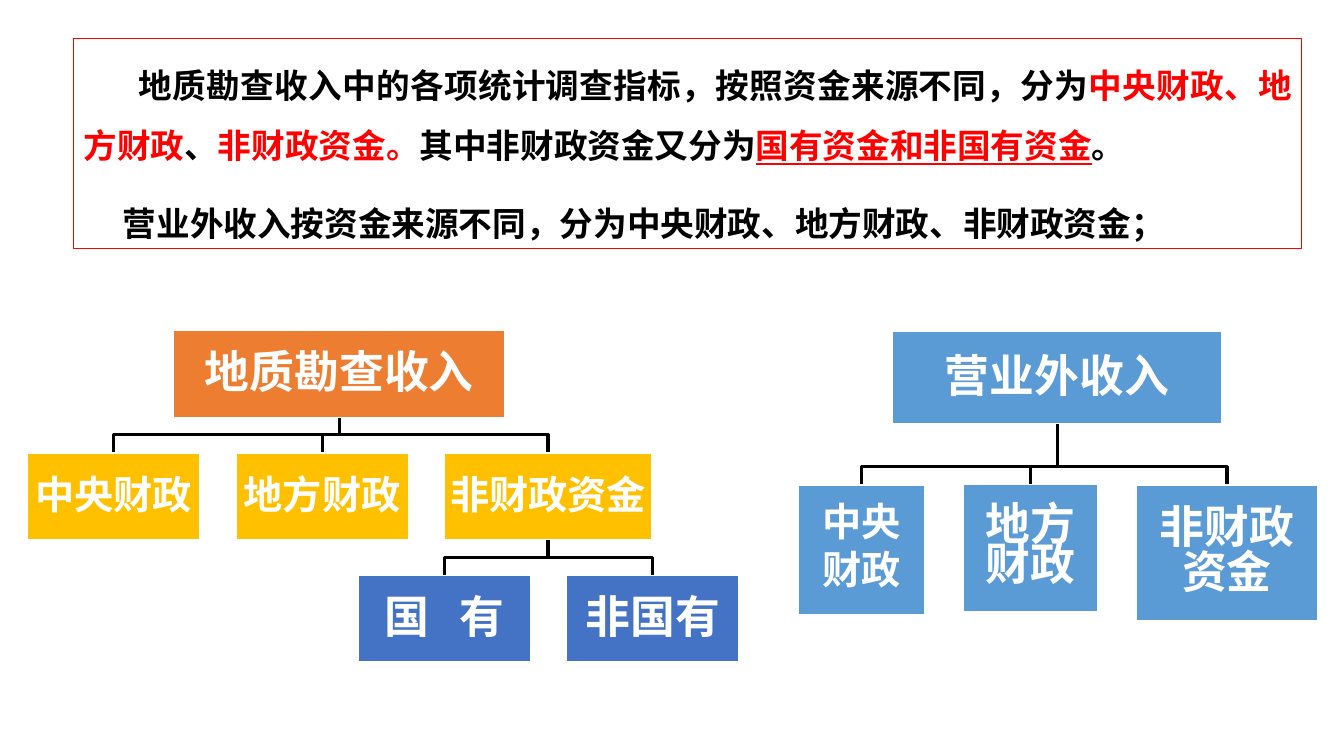
from lxml.etree import SubElement
from pptx import Presentation
from pptx.dml.color import RGBColor
from pptx.enum.shapes import MSO_SHAPE
from pptx.enum.text import MSO_ANCHOR, PP_ALIGN
from pptx.oxml.ns import qn
from pptx.util import Inches, Pt

BLACK = RGBColor(0x00, 0x00, 0x00)
WHITE = RGBColor(0xFF, 0xFF, 0xFF)
RED = RGBColor(0xFF, 0x00, 0x00)
ORANGE = RGBColor(0xED, 0x7D, 0x31)
GOLD = RGBColor(0xFF, 0xC0, 0x00)
NAVY = RGBColor(0x44, 0x72, 0xC4)
BLUE = RGBColor(0x5B, 0x9B, 0xD5)
CJK_FONT = "Noto Sans CJK SC"
BAR_GAP = 0.18  # height of a branch bar above the boxes it leads to


def write(paragraph, text, size=32, color=WHITE, font=CJK_FONT,
          underline=False, tracking=0):
    """Add one bold run to a paragraph; tracking is in points."""
    run = paragraph.add_run()
    run.text = text
    run.font.size = Pt(size)
    run.font.bold = True
    run.font.underline = underline
    run.font.color.rgb = color
    run.font.name = font
    properties = run.font._element
    SubElement(properties, qn("a:ea")).set("typeface", CJK_FONT)
    if tracking:
        properties.set("spc", str(tracking * 100))


def add_box(slide, box, fill, outline, outline_width, margins):
    left, top, width, height = map(Inches, box)
    rectangle = slide.shapes.add_shape(MSO_SHAPE.RECTANGLE, left, top, width, height)
    rectangle.shadow.inherit = False
    rectangle.fill.solid()
    rectangle.fill.fore_color.rgb = fill
    rectangle.line.color.rgb = outline
    rectangle.line.width = Pt(outline_width)
    frame = rectangle.text_frame
    frame.word_wrap = True
    frame.vertical_anchor = MSO_ANCHOR.MIDDLE
    frame.margin_left = frame.margin_right = Inches(margins[0])
    frame.margin_top = frame.margin_bottom = Inches(margins[1])
    return frame


def add_paragraphs(frame, count, align):
    for _ in range(count - 1):
        frame.add_paragraph()
    for paragraph in frame.paragraphs:
        paragraph.alignment = align
    return frame.paragraphs


def add_node(slide, box, lines, fill, size=32, spacing=0.9, after=0):
    """Draw one tree box; each line is a list of (text, tracking) runs."""
    frame = add_box(slide, box, fill, WHITE, 1, (0.02, 0.02))
    for paragraph, runs in zip(add_paragraphs(frame, len(lines), PP_ALIGN.CENTER), lines):
        paragraph.line_spacing = spacing
        paragraph.space_after = Pt(after)
        for text, tracking in runs:
            write(paragraph, text, size=size, tracking=tracking)


def add_branches(slide, parent, children):
    """Draw an elbow from the foot of the parent to the top of each child."""
    left, top, width, height = parent
    stem, foot = left + width / 2, top + height
    for child_left, child_top, child_width, _ in children:
        tip, bar = child_left + child_width / 2, child_top - BAR_GAP
        elbow = slide.shapes.build_freeform(Inches(stem), Inches(foot))
        elbow.add_line_segments(
            [(Inches(x), Inches(y)) for x, y in ((stem, bar), (tip, bar), (tip, child_top))],
            close=False)
        branch = elbow.convert_to_shape()
        branch.shadow.inherit = False
        branch.fill.background()
        branch.line.color.rgb = BLACK
        branch.line.width = Pt(2.25)


def add_summary(slide, box):
    frame = add_box(slide, box, WHITE, RED, 0.75, (0.1, 0.05))
    sources, other_income = add_paragraphs(frame, 2, PP_ALIGN.JUSTIFY)
    for paragraph, indent in ((sources, 0.55), (other_income, 0.39)):
        paragraph.line_spacing = 1.5
        paragraph._p.get_or_add_pPr().set("indent", str(Inches(indent)))
    sources.space_after = Pt(12)
    for text, color, underline in (
        ("地质勘查收入中的各项统计调查指标，按照资金来源不同，分为", BLACK, False),
        ("中央财政、地方财政", RED, False),
        ("、", BLACK, False),
        ("非财政资金。", RED, False),
        ("其中非财政资金又分为", BLACK, False),
        ("国有资金和非国有资金", RED, True),
        ("。", BLACK, False),
    ):
        write(sources, text, size=24, color=color, font="Arial", underline=underline)
    write(other_income, "营业外收入按资金来源不同，分为中央财政、地方财政、非财政资金；",
          size=24, color=BLACK, font="Arial")


def add_survey_tree(slide, left, top):
    height, step, column = 0.86, 1.215, 2.07
    root = (left + 1.45, top, 3.29, height)
    funds = [(left + i * column, top + step, width, height)
             for i, width in enumerate((1.71, 1.71, 2.05))]
    owners = [(left + 3.28 + i * column, top + 2 * step, 1.71, height) for i in range(2)]
    # Branches lie behind the boxes
    add_branches(slide, funds[-1], owners)
    add_branches(slide, root, funds)
    add_node(slide, root, [[("地质勘查收入", 0)]], ORANGE)
    for box, name in zip(funds, ("中央财政", "地方财政", "非财政资金")):
        add_node(slide, box, [[(name, 0)]], GOLD, size=28)
    for box, runs in zip(owners, ([("国 ", 7), ("有", 0)], [("非国有", 0)])):
        add_node(slide, box, [runs], NAVY)


def add_other_income_tree(slide, left, top):
    root = (left + 0.93, top, 3.27, 0.91)
    row = top + 1.52
    central = (left, row, 1.25, 1.29)
    local = (left + 1.63, row, 1.34, 1.26)
    non_fiscal = (left + 3.35, row, 1.8, 1.35)
    add_branches(slide, root, (central, local, non_fiscal))
    add_node(slide, root, [[("营业外收入", 0)]], BLUE)
    add_node(slide, central, [[("中央", 0)], [("财政", 0)]], BLUE,
             size=28, spacing=0.74, after=9.8)
    add_node(slide, local, [[("地方财政", 0)]], BLUE, spacing=0.74)
    add_node(slide, non_fiscal, [[("非财政", 0)], [("资金", 0)]], BLUE, spacing=0.83)


def main():
    deck = Presentation()
    deck.slide_width, deck.slide_height = Inches(13.33), Inches(7.5)
    slide = deck.slides.add_slide(deck.slide_layouts[6])
    add_survey_tree(slide, 0.27, 3.28)
    add_other_income_tree(slide, 7.92, 3.29)
    add_summary(slide, (0.73, 0.38, 12.18, 2.09))
    deck.save("out.pptx")


if __name__ == "__main__":
    main()
